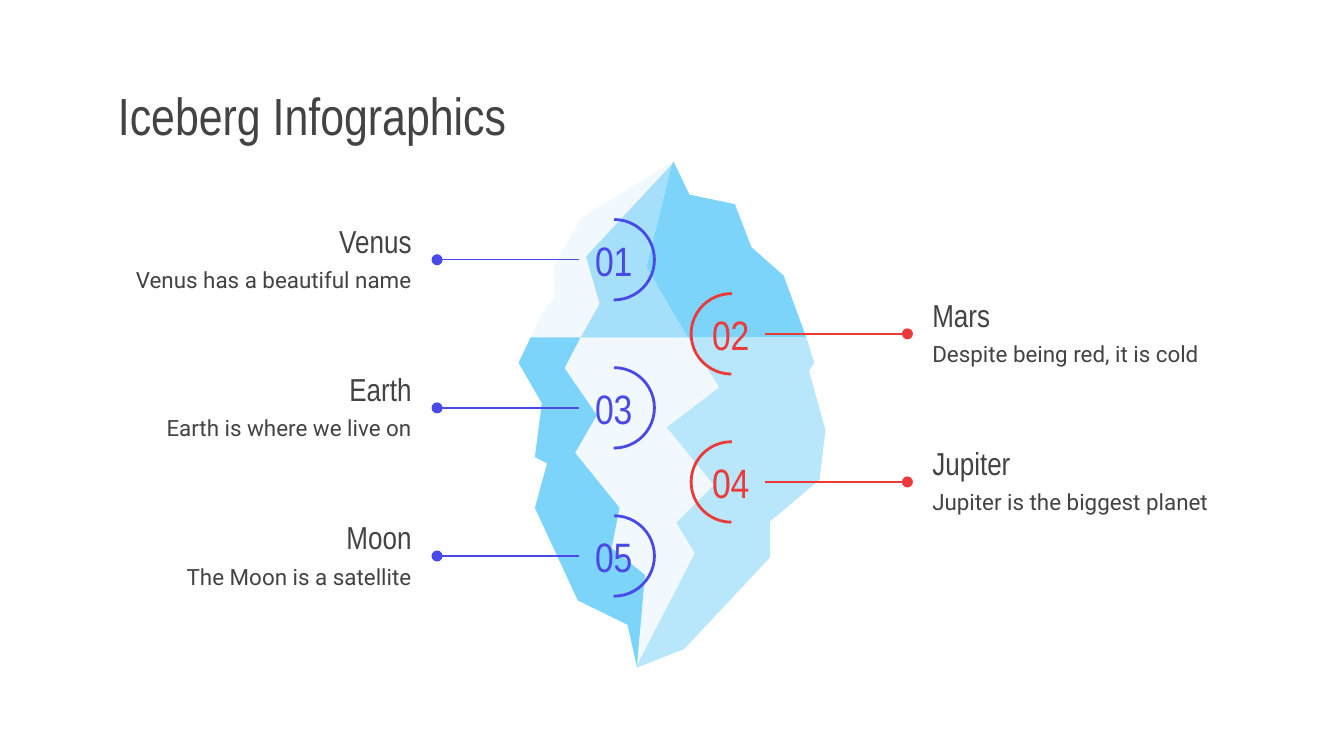
from lxml import etree
from pptx import Presentation
from pptx.dml.color import RGBColor
from pptx.enum.shapes import MSO_CONNECTOR, MSO_SHAPE
from pptx.enum.text import MSO_ANCHOR, PP_ALIGN
from pptx.oxml.ns import qn
from pptx.util import Cm, Pt

LEFT, CENTER, RIGHT = PP_ALIGN.LEFT, PP_ALIGN.CENTER, PP_ALIGN.RIGHT
MIDDLE = MSO_ANCHOR.MIDDLE
ARC = MSO_SHAPE.ARC
STRAIGHT = MSO_CONNECTOR.STRAIGHT

GRAY, BLUE, RED = "434343", "4949E7", "EC3A3B"
SKY, PALE, SNOW, ICE = "7CD4FB", "B8E6FA", "F1F9FE", "A5DFF9"
HEAD, BODY = "Arial Narrow", "Roboto"

# Points of the iceberg in centimetres; the water lies at 6.38.
PEAK, CREST, KNEE = (12.73, 3.05), (12.7, 3.1), (12.22, 5.05)
WEST, SHORE, MID, EAST = (10.03, 6.38), (10.97, 6.38), (13, 6.38), (15.24, 6.38)
TIP, HEEL = (12.04, 12.62), (12.04, 12.57)
CLEFT = [(11.07, 4.85), (11.33, 5.74), SHORE]
RIDGE = [SHORE, (10.67, 6.96), (11.28, 7.85), (10.87, 8.56)]
SEAM = RIDGE + [(11.28, 9.19), (11.02, 9.93), (11.76, 11.2)]

FACETS = [
    (PALE, SEAM + [(12.17, 11.91), HEEL, TIP, (12.93, 12.27), (14.55, 10.54),
                   (14.55, 9.86), (15.49, 9.07), (15.6, 8.13), (15.29, 7.01),
                   (15.39, 6.86), EAST]),
    (SNOW, SEAM + [(12.12, 11.91), HEEL, (13.13, 10.46), (12.78, 9.88),
                   (13.49, 9.17), (12.6, 8.08), (13.59, 7.32), MID]),
    (ICE, [CREST, *CLEFT, MID, KNEE]),
    (SKY, [PEAK, CREST, KNEE, MID, EAST, (14.81, 5.21), (14.2, 4.67),
           (13.89, 3.86), (13.03, 3.68)]),
    (SNOW, [PEAK, (11, 4.11), (10.46, 5.05), (10.49, 5.61), (10.26, 5.89),
            WEST, *CLEFT[::-1], CREST]),
    (SKY, [WEST, (9.8, 6.86), (10.24, 7.62), (10.11, 8.64), (10.34, 8.76),
           (10.11, 9.6), (10.92, 11.35), (11.86, 11.81), TIP, HEEL,
           (12.19, 10.87), (11.56, 10.36), (11.71, 9.6), *RIDGE[::-1]]),
]

# "site" is the side of the number box where the line starts.
WEST_SIDE = {"color": BLUE, "text": 1.98, "align": RIGHT, "arc": 10.85,
             "turn": 0, "dot": 8.26, "site": 1}
EAST_SIDE = {"color": RED, "text": 17.37, "align": LEFT, "arc": 13.06,
             "turn": 180, "dot": 17.15, "site": 3}
ITEMS = [
    ("Venus", "Venus has a beautiful name"),
    ("Mars", "Despite being red, it is cold"),
    ("Earth", "Earth is where we live on"),
    ("Jupiter", "Jupiter is the biggest planet"),
    ("Moon", "The Moon is a satellite"),
]
TOP, STEP = 4.91, 1.4


def rgb(color):
    return RGBColor.from_string(color)


def apply(target, values):
    for name, value in values.items():
        setattr(target, name, value)


def add_text(slide, words, box, size, font=HEAD, color=GRAY, align=LEFT):
    shape = slide.shapes.add_textbox(*map(Cm, box))
    frame = shape.text_frame
    sides = ("left", "top", "right", "bottom")
    apply(frame, {f"margin_{side}": Cm(0.25) for side in sides})
    apply(frame, {"word_wrap": True, "vertical_anchor": MIDDLE})
    para = frame.paragraphs[0]
    para.alignment = align
    run = para.add_run()
    run.text = words
    apply(run.font, {"size": Pt(size), "name": font})
    run.font.color.rgb = rgb(color)
    return shape


def add_facet(slide, color, points):
    start, *rest = [(Cm(x), Cm(y)) for x, y in points]
    build = slide.shapes.build_freeform(*start)
    build.add_line_segments(rest, close=True)
    shape = build.convert_to_shape()
    shape.shadow.inherit = False
    shape.fill.solid()
    shape.fill.fore_color.rgb = rgb(color)
    shape.line.fill.background()


def add_arc(slide, x, y, color, turn):
    arc = slide.shapes.add_shape(ARC, Cm(x), Cm(y), Cm(1.52), Cm(1.52))
    arc.adjustments[0], arc.adjustments[1] = 162, 54.56
    arc.rotation = turn
    arc.shadow.inherit = False
    arc.fill.background()
    arc.line.color.rgb = rgb(color)
    arc.line.width = Pt(1.5)


def add_lead(slide, label, site, x, y, color):
    """Draw a line from a side of the label to a dot at x, y."""
    lead = slide.shapes.add_connector(STRAIGHT, 0, 0, Cm(x), Cm(y))
    lead.begin_connect(label, site)
    lead.line.color.rgb = rgb(color)
    lead.line.width = Pt(0.75)
    stroke = lead.line._get_or_add_ln()
    etree.SubElement(stroke, qn("a:tailEnd"), type="oval")
    etree.SubElement(lead._element.spPr, qn("a:effectLst"))


def add_item(slide, index, name, note):
    side = EAST_SIDE if index % 2 else WEST_SIDE
    color, align = side["color"], side["align"]
    y = TOP + STEP * index
    add_text(slide, note, (side["text"], y - 0.13, 6.05, 1.02), 12, BODY,
             align=align)
    add_text(slide, name, (side["text"], y - 0.87, 6.05, 1.02), 17,
             align=align)
    add_arc(slide, side["arc"], y - 0.76, color, side["turn"])
    label = add_text(slide, f"{index + 1:02}",
                     (side["arc"] + 0.1, y - 0.51, 1.3, 1.02), 22,
                     color=color, align=CENTER)
    add_lead(slide, label, side["site"], side["dot"], y, color)


def main():
    deck = Presentation()
    apply(deck, {"slide_width": Cm(25.4), "slide_height": Cm(14.29)})
    slide = deck.slides.add_slide(deck.slide_layouts[6])
    add_text(slide, "Iceberg Infographics", (1.98, 1.5, 21.46, 1.35), 28)
    for color, points in FACETS:
        add_facet(slide, color, points)
    for index, (name, note) in enumerate(ITEMS):
        add_item(slide, index, name, note)
    deck.save("out.pptx")


if __name__ == "__main__":
    main()
